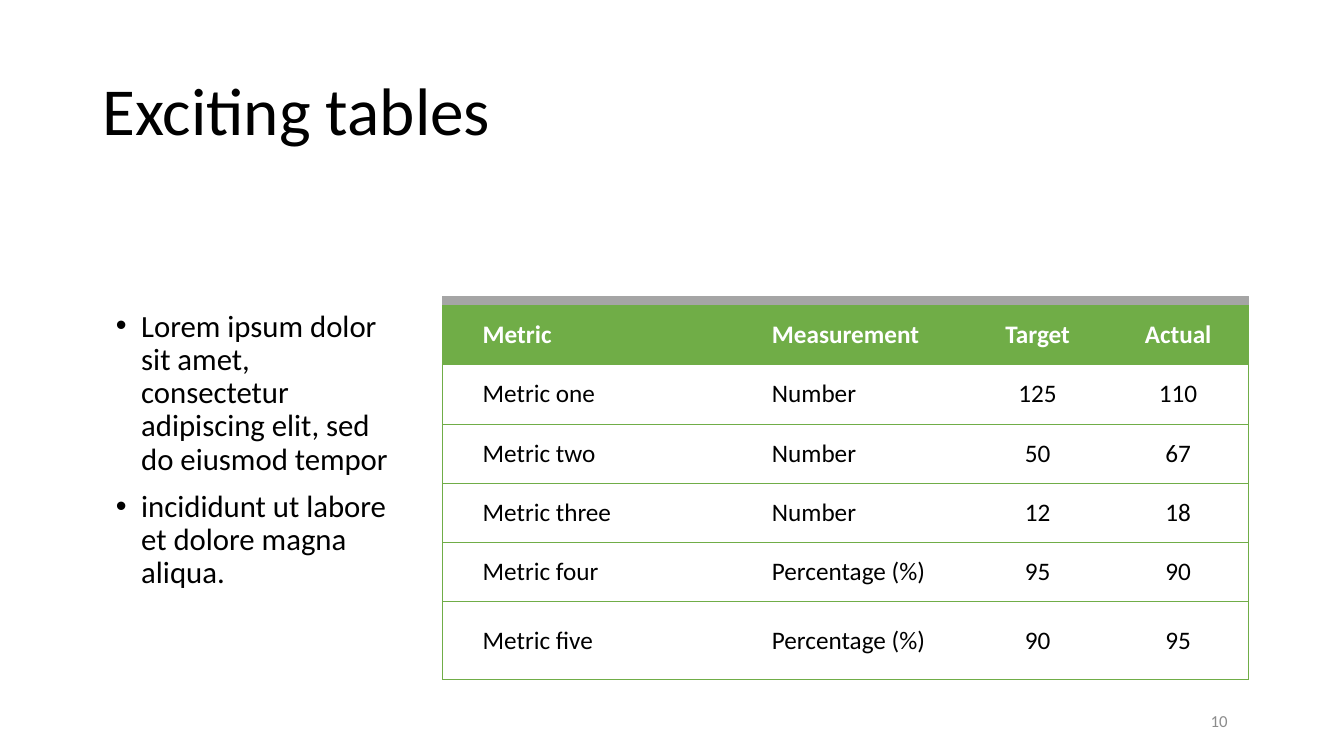
from lxml.etree import SubElement
from pptx import Presentation
from pptx.dml.color import RGBColor
from pptx.enum.shapes import MSO_SHAPE
from pptx.enum.text import MSO_ANCHOR, PP_ALIGN
from pptx.oxml.ns import qn
from pptx.util import Cm, Pt

BLACK = RGBColor(0x00, 0x00, 0x00)
WHITE = RGBColor(0xFF, 0xFF, 0xFF)
GREEN = RGBColor(0x70, 0xAD, 0x47)
GRAY = RGBColor(0xA5, 0xA5, 0xA5)
NUMBER_GRAY = RGBColor(0x8C, 0x8C, 0x8C)

TITLE = "Exciting tables"
BULLETS = [
    "Lorem ipsum dolor sit amet, consectetur adipiscing elit, sed do eiusmod tempor",
    "incididunt ut labore et dolore magna aliqua.",
]
METRICS = [
    ("Metric", "Measurement", "Target", "Actual"),
    ("Metric one", "Number", "125", "110"),
    ("Metric two", "Number", "50", "67"),
    ("Metric three", "Number", "12", "18"),
    ("Metric four", "Percentage (%)", "95", "90"),
    ("Metric five", "Percentage (%)", "90", "95"),
]
COLUMN_WIDTHS = [7.29, 5.94, 3.54, 3.54]
ROW_HEIGHTS = [1.49] * 5 + [1.98]
TABLE_LEFT, TABLE_TOP, TABLE_WIDTH = 11.15, 7.7, 20.32
BAR_HEIGHT = 0.23


def add_text(p, text, size=18, color=BLACK, font="Calibri", bold=False,
             align=PP_ALIGN.LEFT, line=None, before=None, left=0, hanging=0, bullet=None):
    p.alignment = align
    if line:
        p.line_spacing = line
    if before is not None:
        p.space_before = Pt(before)
    pPr = p._p.get_or_add_pPr()
    pPr.set("marL", str(Cm(left)))
    pPr.set("indent", str(Cm(-hanging)))
    if bullet:
        SubElement(pPr, qn("a:buFont"), typeface="Arial")
        SubElement(pPr, qn("a:buChar"), char=bullet)
    r = p.add_run()
    r.text = text
    r.font.name = font
    r.font.size = Pt(size)
    r.font.bold = bold
    r.font.color.rgb = color


def add_borders(cell, sides):
    tcPr = cell._tc.get_or_add_tcPr()
    for side in "LRTB":
        ln = SubElement(tcPr, qn(f"a:ln{side}"), w=str(Pt(0.5)))
        if side in sides:
            fill = SubElement(ln, qn("a:solidFill"))
            SubElement(fill, qn("a:srgbClr"), val=str(GREEN))
        else:
            SubElement(ln, qn("a:noFill"))


class SlideBuilder:
    def __init__(self, slide, font):
        self.s = slide
        self.font = font

    def bar(self, x, y, w, h, color):
        sp = self.s.shapes.add_shape(MSO_SHAPE.RECTANGLE, Cm(x), Cm(y), Cm(w), Cm(h))
        sp.shadow.inherit = False
        sp.fill.solid()
        sp.fill.fore_color.rgb = color
        sp.line.color.rgb = color
        sp.line.width = Pt(1)

    def text(self, x, y, w, h, paragraphs, anchor=MSO_ANCHOR.MIDDLE, **style):
        sp = self.s.shapes.add_textbox(Cm(x), Cm(y), Cm(w), Cm(h))
        tf = sp.text_frame
        tf.word_wrap = True
        tf.vertical_anchor = anchor
        for i, text in enumerate(paragraphs):
            p = tf.add_paragraph() if i else tf.paragraphs[0]
            add_text(p, text, font=self.font, **style)

    def table(self, x, y, w, rows, widths, heights):
        table = self.s.shapes.add_table(
            len(rows), len(widths), Cm(x), Cm(y), Cm(w), Cm(sum(heights))).table
        table.horz_banding = False
        for column, width in zip(table.columns, widths):
            column.width = Cm(width)
        for i, (values, height) in enumerate(zip(rows, heights)):
            table.rows[i].height = Cm(height)
            for j, value in enumerate(values):
                self.cell(table.cell(i, j), value, header=i == 0, numeric=j > 1,
                          first=j == 0, last=j == len(widths) - 1)

    def cell(self, cell, value, header, numeric, first, last):
        add_borders(cell, "TB" + "L" * first + "R" * last)
        cell.vertical_anchor = MSO_ANCHOR.MIDDLE
        cell.fill.solid()
        cell.fill.fore_color.rgb = GREEN if header else WHITE
        add_text(cell.text_frame.paragraphs[0], value, font=self.font, bold=header,
                 color=WHITE if header else BLACK,
                 align=PP_ALIGN.CENTER if numeric else PP_ALIGN.LEFT,
                 left=0 if numeric else 0.76)


def main():
    prs = Presentation()
    prs.slide_width, prs.slide_height = Cm(33.87), Cm(19.05)
    s = SlideBuilder(prs.slides.add_slide(prs.slide_layouts[6]), "Calibri")
    s.bar(TABLE_LEFT, TABLE_TOP - BAR_HEIGHT, TABLE_WIDTH, BAR_HEIGHT, GRAY)
    s.text(2.33, 1.02, 29.21, 3.68, [TITLE], size=48, line=0.9)
    s.text(2.67, TABLE_TOP, 7.57, 9.42, BULLETS, anchor=MSO_ANCHOR.TOP, size=22,
           line=0.9, before=10, left=0.64, hanging=0.64, bullet="•")
    s.table(TABLE_LEFT, TABLE_TOP, TABLE_WIDTH, METRICS, COLUMN_WIDTHS, ROW_HEIGHTS)
    s.text(28.6, 17.65, 2.59, 1.02, ["10"], size=12, color=NUMBER_GRAY,
           align=PP_ALIGN.RIGHT)
    prs.save("out.pptx")


if __name__ == "__main__":
    main()
